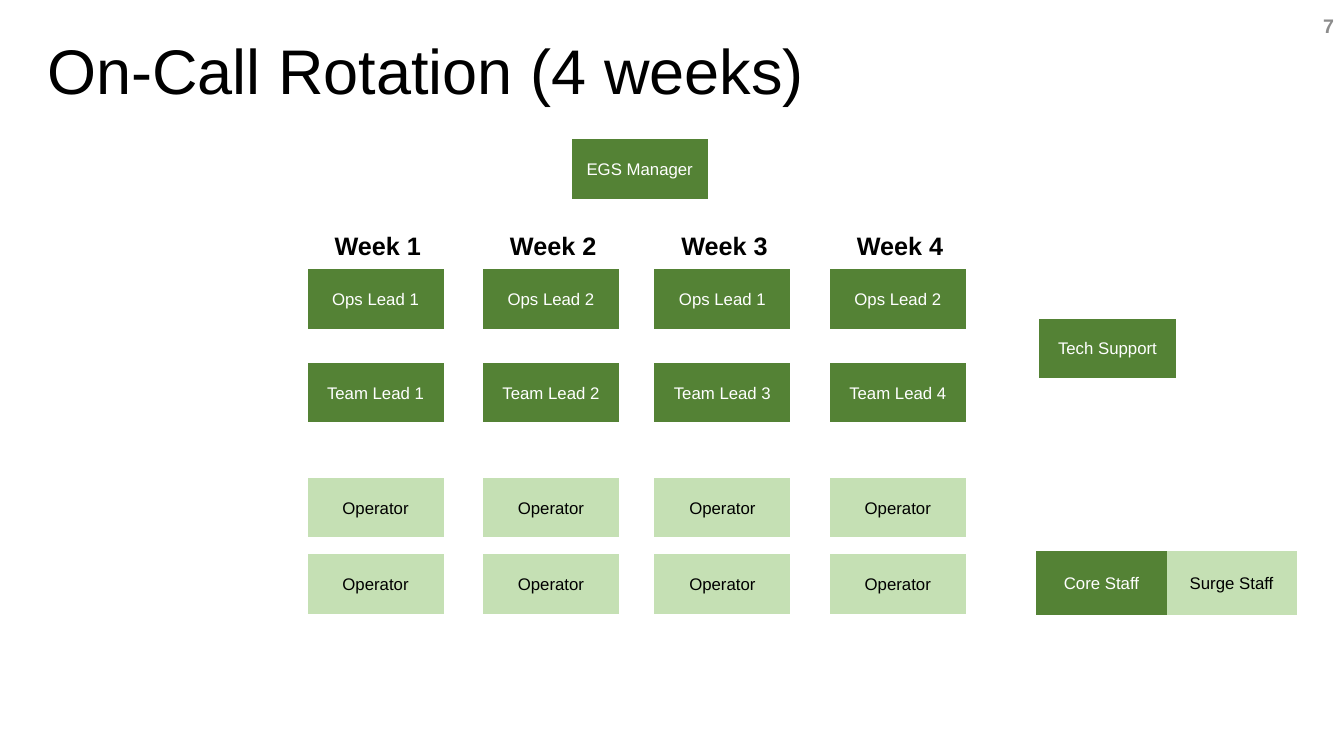
from pptx import Presentation
from pptx.dml.color import RGBColor
from pptx.enum.shapes import MSO_SHAPE
from pptx.enum.text import MSO_ANCHOR, PP_ALIGN
from pptx.util import Inches, Pt

BOX = MSO_SHAPE.FLOWCHART_PROCESS
TOP, MID, LOW = MSO_ANCHOR.TOP, MSO_ANCHOR.MIDDLE, MSO_ANCHOR.BOTTOM
LEFT, CENTER, RIGHT = PP_ALIGN.LEFT, PP_ALIGN.CENTER, PP_ALIGN.RIGHT
COLORS = {"core": "548235", "surge": "C5E0B4", "white": "FFFFFF",
          "black": "000000", "gray": "8C8C8C"}


class Chart:
    """Draws staff boxes and labels on one slide in a shared style."""

    def __init__(self, slide):
        self.slide = slide
        self.font = "Arial"

    def color(self, name):
        return RGBColor.from_string(COLORS[name])

    def fit(self, shape, text, size, color, align, anchor, pads, bold=False):
        frame = shape.text_frame
        frame.text = text
        frame.vertical_anchor = anchor
        (frame.margin_left, frame.margin_top,
         frame.margin_right, frame.margin_bottom) = [Inches(p) for p in pads]
        para = frame.paragraphs[0]
        para.alignment = align
        font = para.runs[0].font
        font.name, font.size, font.bold = self.font, Pt(size), bold
        font.color.rgb = self.color(color)
        return frame

    def box(self, text, x, y, staff="core", w=1.35, h=0.59):
        shape = self.slide.shapes.add_shape(
            BOX, Inches(x), Inches(y), Inches(w), Inches(h))
        shape.shadow.inherit = False
        shape.fill.solid()
        shape.fill.fore_color.rgb = self.color(staff)
        shape.line.fill.background()
        ink = "white" if staff == "core" else "black"
        frame = self.fit(shape, text, 12, ink, CENTER, MID, (0, 0, 0, 0))
        frame.word_wrap = True

    def label(self, text, x, y, w, h, size, color="black", align=LEFT,
              anchor=TOP, bold=True, wrap=True, pads=(0.1, 0.05, 0.1, 0.05)):
        shape = self.slide.shapes.add_textbox(
            Inches(x), Inches(y), Inches(w), Inches(h))
        frame = self.fit(shape, text, size, color, align, anchor, pads, bold)
        frame.word_wrap = wrap
        return frame


def main():
    deck = Presentation()
    deck.slide_width, deck.slide_height = Inches(13.33), Inches(7.5)
    chart = Chart(deck.slides.add_slide(deck.slide_layouts[6]))

    title = chart.label("On-Call Rotation (4 weeks)", 0.47, 0.01, 10.95, 1.11,
                        45, anchor=LOW, bold=False, pads=(0, 0.05, 0.1, 0.05))
    title.paragraphs[0].line_spacing = 0.9
    chart.label("7", 12.84, 0, 0.49, 0.5, 14, "gray", RIGHT, MID)

    chart.box("EGS Manager", 5.67, 1.38)
    for week, x in enumerate((3.05, 4.79, 6.49, 8.23), 1):
        chart.label(f"Week {week}", x + 0.17, 2.24, 1.07, 0.4, 18, wrap=False)
        chart.box(f"Ops Lead {(week - 1) % 2 + 1}", x, 2.67)
        chart.box(f"Team Lead {week}", x, 3.6)
        for y in (4.74, 5.5):
            chart.box("Operator", x, y, "surge")
    chart.box("Tech Support", 10.31, 3.16)

    chart.box("Core Staff", 10.28, 5.47, "core", 1.29, 0.63)
    chart.box("Surge Staff", 11.57, 5.47, "surge", 1.29, 0.63)
    deck.save("out.pptx")


if __name__ == "__main__":
    main()
